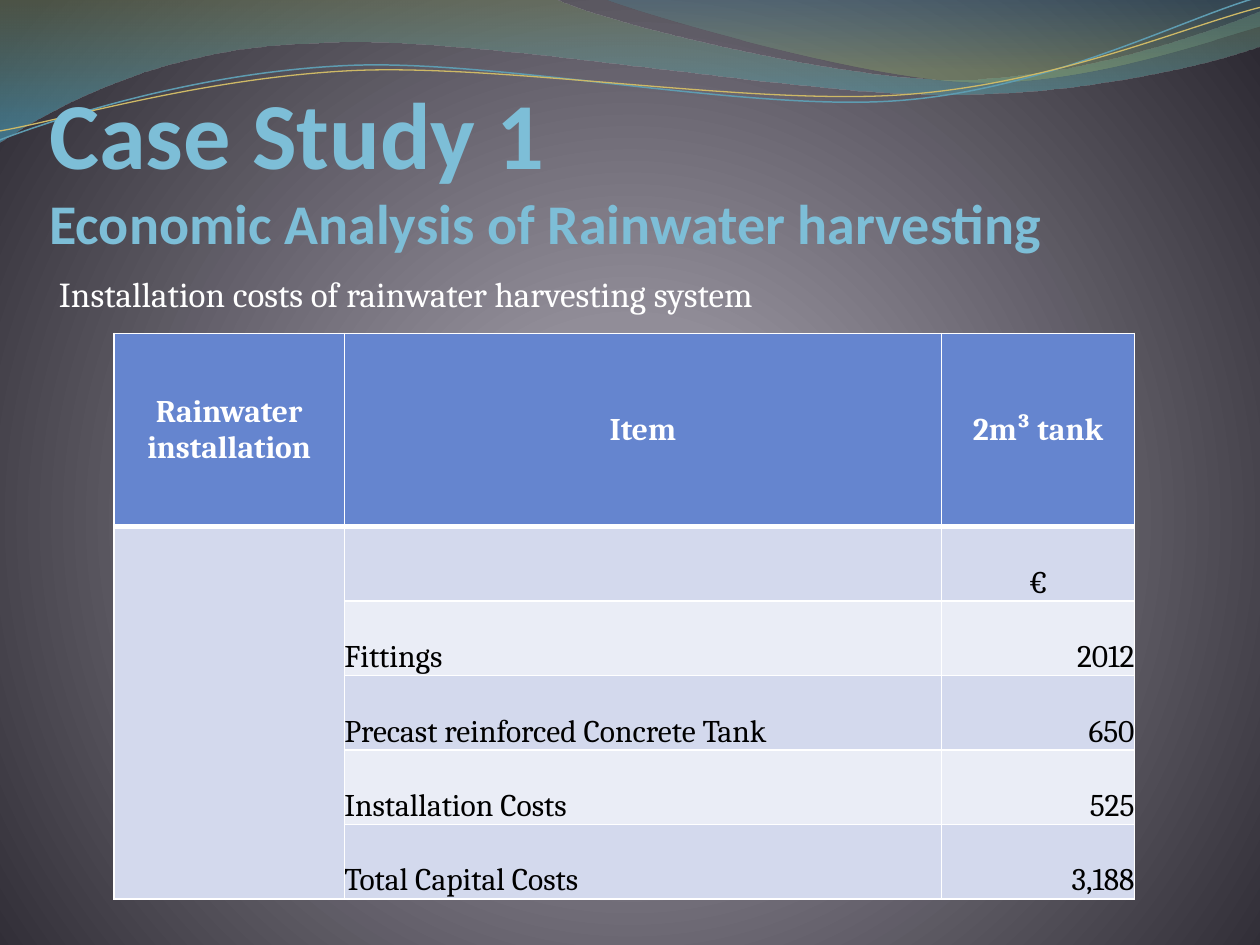
from pptx import Presentation, oxml, util as u
from pptx.dml.color import RGBColor
from pptx.enum import text
from pptx.oxml.ns import nsdecls, qn

WHITE = RGBColor(0xFF, 0xFF, 0xFF)
BLACK = RGBColor(0, 0, 0)
TITLE_BLUE = RGBColor(0x7D, 0xBE, 0xD7)
HEADER_BLUE = RGBColor(0x65, 0x85, 0xCF)
BANDS = [RGBColor(0xD3, 0xD9, 0xED), RGBColor(0xEA, 0xED, 0xF6)]
LINE_BLUE = RGBColor(0x5E, 0x9C, 0xB1)
LINE_GOLD = RGBColor(0xCE, 0xB9, 0x66)

BACKDROP = [(0, RGBColor(0x96, 0x92, 0x9E), 100),
            (25, RGBColor(0x91, 0x8D, 0x98), 100),
            (100, RGBColor(0x2D, 0x2A, 0x33), 100)]
RADIAL = '<a:path path="circle"><a:fillToRect l="10000" t="110000" r="10000" b="100000"/></a:path>'
DOWNWARD = '<a:lin ang="5400000" scaled="0"/>'

BANNERS = [
    ([(0, 0), (11.18, -0.03),
      (12.09, 0.43, 16.87, 1.6, 19.25, 1.6), (21.67, 1.6, 24.33, 0.66, 25.4, 0.23),
      (25.43, 0.91), (24.97, 1.12, 22.1, 1.93, 18.95, 1.9),
      (15.8, 1.9, 9.7, 0.71, 6.53, 0.86), (3.28, 0.91, 1.17, 2.11, -0.03, 2.87), (0, 0)],
     [(0, RGBColor(0x74, 0x85, 0x5E), 45), (100, RGBColor(0x4A, 0xAC, 0xCE), 55)]),
    ([(12.17, -0.03), (12.93, 0.28, 17.32, 1.57, 19.53, 1.65),
      (21.74, 1.75, 24.41, 0.81, 25.4, 0.53), (25.4, 0), (12.17, -0.03)],
     [(0, RGBColor(0x45, 0x88, 0x9F), 30), (80, RGBColor(0x8A, 0xA3, 0x6D), 45)]),
]
WAVES = [
    ([(0, 2.82), (1.22, 2.36, 4.01, 1.45, 7.04, 1.32),
      (10.03, 1.19, 15.06, 2.26, 18.11, 2.03), (21.16, 1.8, 23.83, 0.38, 25.35, -0.05)],
     LINE_BLUE, 0.85),
    ([(0, 2.64), (1.19, 2.44, 4.17, 1.55, 7.19, 1.42),
      (10.24, 1.3, 15.16, 2.13, 18.21, 1.91), (21.23, 1.7, 23.9, 0.53, 25.4, 0.15)],
     LINE_GOLD, 0.75),
]

TITLE = [("Case Study 1", 54), ("Economic Analysis of Rainwater harvesting", 32)]
SUBTITLE = "Installation costs of rainwater harvesting system"
COSTS = [
    ("Rainwater installation", "Item", "2m³ tank"),
    ("", "", "€"),
    ("", "Fittings", "2012"),
    ("", "Precast reinforced Concrete Tank", "650"),
    ("", "Installation Costs", "525"),
    ("", "Total Capital Costs", "3,188"),
]
COLUMN_WIDTHS = [4.64, 12.04, 3.89]
ROW_HEIGHTS = [3.9] + [1.5] * 5


def write(paragraph, content, size=18, font="Cambria", color=BLACK, bold=False, align=None):
    run = paragraph.add_run()
    run.text = content
    run.font.size = u.Pt(size)
    run.font.name = font
    run.font.bold = bold
    run.font.color.rgb = color
    if align is not None:
        paragraph.alignment = align


def set_gradient(fill, owner, stops, direction):
    fill.gradient()
    old = next(owner.iter(qn("a:gradFill")))
    stop_xml = "".join(
        f'<a:gs pos="{position * 1000}"><a:srgbClr val="{color}">'
        f'<a:alpha val="{opacity * 1000}"/></a:srgbClr></a:gs>'
        for position, color, opacity in stops)
    old.getparent().replace(old, oxml.parse_xml(
        f'<a:gradFill {nsdecls("a")} rotWithShape="1"><a:gsLst>{stop_xml}</a:gsLst>'
        f'{direction}</a:gradFill>'))


def add_outline(slide, segments, close):
    points = [(u.Cm(segment[i]), u.Cm(segment[i + 1]))
              for segment in segments for i in range(0, len(segment), 2)]
    builder = slide.shapes.build_freeform(*points[0])
    builder.add_line_segments(points[1:], close=close)
    shape = builder.convert_to_shape()
    shape.shadow.inherit = False
    steps = iter(list(shape._element.iter(qn("a:lnTo"))))
    for segment in segments[1:]:
        first = next(steps)
        if len(segment) == 6:
            curve = oxml.parse_xml(f'<a:cubicBezTo {nsdecls("a")}/>')
            first.addprevious(curve)
            for step in (first, next(steps), next(steps)):
                curve.append(step[0])
                step.getparent().remove(step)
    return shape


def add_frame(slide, box, top=0.0, bottom=0.0):
    frame = slide.shapes.add_textbox(*map(u.Cm, box)).text_frame
    frame.word_wrap = True
    frame.margin_left, frame.margin_right = 0, u.Cm(0.05)
    frame.margin_top, frame.margin_bottom = u.Cm(top), u.Cm(bottom)
    return frame


def set_borders(cell, top, bottom):
    properties = cell._tc.get_or_add_tcPr()
    for index, (side, width) in enumerate([("L", 1), ("R", 1), ("T", top), ("B", bottom)]):
        properties.insert(index, oxml.parse_xml(
            f'<a:ln{side} {nsdecls("a")} w="{u.Pt(width)}"><a:solidFill>'
            f'<a:srgbClr val="{WHITE}"/></a:solidFill></a:ln{side}>'))


def add_cost_table(slide):
    table = slide.shapes.add_table(
        len(COSTS), len(COLUMN_WIDTHS), u.Cm(2.3), u.Cm(6.72),
        u.Cm(sum(COLUMN_WIDTHS)), u.Cm(sum(ROW_HEIGHTS))).table
    for column, width in zip(table.columns, COLUMN_WIDTHS):
        column.width = u.Cm(width)
    for row, height in zip(table.rows, ROW_HEIGHTS):
        row.height = u.Cm(height)
    for r, values in enumerate(COSTS):
        header = r == 0
        for c, value in enumerate(values):
            cell = table.cell(r, c)
            cell.margin_left = cell.margin_right = cell.margin_top = cell.margin_bottom = 0
            cell.vertical_anchor = text.MSO_ANCHOR.MIDDLE if header else text.MSO_ANCHOR.BOTTOM
            cell.fill.solid()
            cell.fill.fore_color.rgb = HEADER_BLUE if header else BANDS[0 if c == 0 else (r - 1) % 2]
            set_borders(cell, 3 if r == 1 else 1, 3 if header else 1)
            if value:
                if header or value == "€":
                    align = text.PP_ALIGN.CENTER
                else:
                    align = text.PP_ALIGN.RIGHT if c == 2 else text.PP_ALIGN.LEFT
                write(cell.text_frame.paragraphs[0], value, bold=header,
                      color=WHITE if header else BLACK, align=align)
    table.cell(1, 0).merge(table.cell(len(COSTS) - 1, 0))


def main():
    presentation = Presentation()
    presentation.slide_width, presentation.slide_height = u.Cm(25.4), u.Cm(19.05)
    slide = presentation.slides.add_slide(presentation.slide_layouts[6])
    set_gradient(slide.background.fill, slide._element, BACKDROP, RADIAL)

    for segments, stops in BANNERS:
        banner = add_outline(slide, segments, True)
        set_gradient(banner.fill, banner._element, stops, DOWNWARD)
        banner.line.fill.background()
    for segments, color, width in WAVES:
        wave = add_outline(slide, segments, False)
        wave.fill.background()
        wave.line.color.rgb = color
        wave.line.width = u.Pt(width)

    title = add_frame(slide, (0.99, 0, 21.82, 5.16))
    title.vertical_anchor = text.MSO_ANCHOR.BOTTOM
    paragraph = title.paragraphs[0]
    for index, (line, size) in enumerate(TITLE):
        if index:
            paragraph.add_line_break()
        write(paragraph, line, size=size, font="Calibri", color=TITLE_BLUE, bold=True)

    subtitle = add_frame(slide, (1.19, 5.36, 21.92, 1.37), top=0.13, bottom=0.13)
    subtitle.paragraphs[0].space_before = u.Pt(4)
    write(subtitle.paragraphs[0], SUBTITLE, size=20, color=WHITE)

    add_cost_table(slide)
    presentation.save("out.pptx")


if __name__ == "__main__":
    main()
